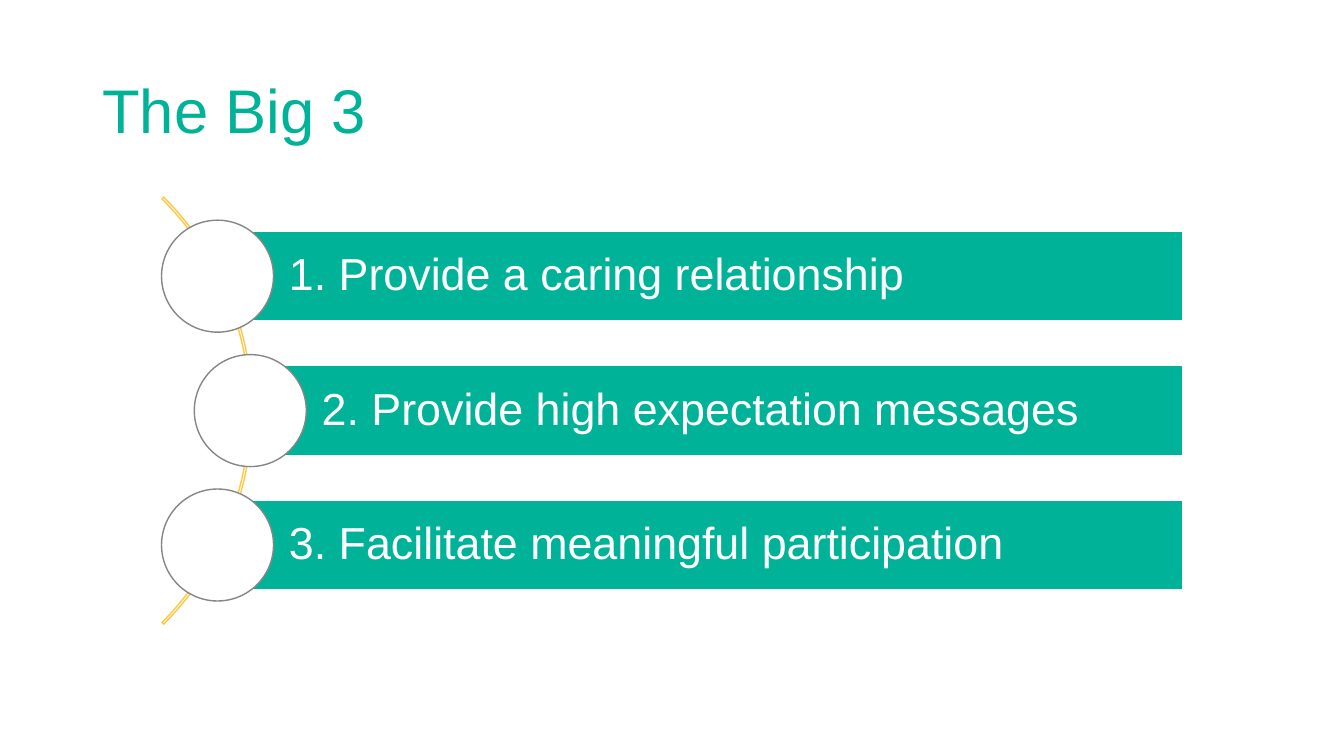
from dataclasses import dataclass
from math import sqrt

from pptx import Presentation
from pptx.dml.color import RGBColor
from pptx.enum.shapes import MSO_SHAPE
from pptx.enum.text import MSO_ANCHOR, PP_ALIGN
from pptx.util import Pt


@dataclass(frozen=True)
class Theme:
    font: str = "Arial"
    title_size: float = 44
    item_size: float = 32
    line_width: float = 1
    green: RGBColor = RGBColor(0x00, 0xB3, 0x98)
    yellow: RGBColor = RGBColor(0xFF, 0xC8, 0x45)
    gray: RGBColor = RGBColor(0x84, 0x87, 0x87)
    white: RGBColor = RGBColor(0xFF, 0xFF, 0xFF)


THEME = Theme()
ITEMS = [
    "1. Provide a caring relationship",
    "2. Provide high expectation messages",
    "3. Facilitate meaningful participation",
]


def set_attributes(target, values):
    for name, value in values.items():
        setattr(target, name, value)


def write_text(shape, text, size, color, left_inset):
    frame = shape.text_frame
    set_attributes(frame, {
        "word_wrap": True,
        "vertical_anchor": MSO_ANCHOR.MIDDLE,
        "margin_left": Pt(left_inset),
    })
    paragraph = frame.paragraphs[0]
    set_attributes(paragraph, {
        "text": text, "alignment": PP_ALIGN.LEFT, "line_spacing": 0.9,
    })
    set_attributes(paragraph.font, {"name": THEME.font, "size": Pt(size)})
    paragraph.font.color.rgb = color


def add_outlined(slide, kind, box, fill, line):
    shape = slide.shapes.add_shape(kind, *map(Pt, box))
    shape.shadow.inherit = False
    if fill is None:
        shape.fill.background()
    else:
        shape.fill.solid()
        shape.fill.fore_color.rgb = fill
    shape.line.color.rgb = line
    shape.line.width = Pt(THEME.line_width)
    return shape


def add_title(slide, box, text):
    title = slide.shapes.add_textbox(*map(Pt, box))
    write_text(title, text, THEME.title_size, THEME.green, 7.2)


def add_curved_list(slide, box, items):
    left, top, width, height = box
    middle = top + height / 2

    # Quarter arc spanning the full height of the box
    radius = height / sqrt(2)
    center = left + 1.5 - height / 2
    arc_box = (center - radius, middle - radius, 2 * radius, 2 * radius)
    arc = add_outlined(slide, MSO_SHAPE.BLOCK_ARC, arc_box, None, THEME.yellow)
    for index, value in enumerate((189, 27, 0.004)):
        arc.adjustments[index] = value

    # Bars start at the centers of their circles; the middle row is shifted
    circle, bar_height, pitch, shift = 80, 64, 96, 23.4
    middle_row = (len(items) - 1) / 2
    for row, item in enumerate(items):
        row_center = middle + (row - middle_row) * pitch
        circle_left = left + (shift if row == middle_row else 0)
        bar_left = circle_left + circle / 2
        bar = add_outlined(
            slide, MSO_SHAPE.RECTANGLE,
            (bar_left, row_center - bar_height / 2,
             left + width - bar_left, bar_height),
            THEME.green, THEME.white)
        write_text(bar, item, THEME.item_size, THEME.white, 51)
        add_outlined(
            slide, MSO_SHAPE.OVAL,
            (circle_left, row_center - circle / 2, circle, circle),
            THEME.white, THEME.gray)


def main():
    presentation = Presentation()
    set_attributes(presentation, {
        "slide_width": Pt(960), "slide_height": Pt(540),
    })
    slide = presentation.slides.add_slide(presentation.slide_layouts[6])
    add_title(slide, (66, 28.75, 828, 104.4), "The Big 3")
    add_curved_list(slide, (115.4, 140.8, 729.2, 305), ITEMS)
    presentation.save("out.pptx")


if __name__ == "__main__":
    main()
